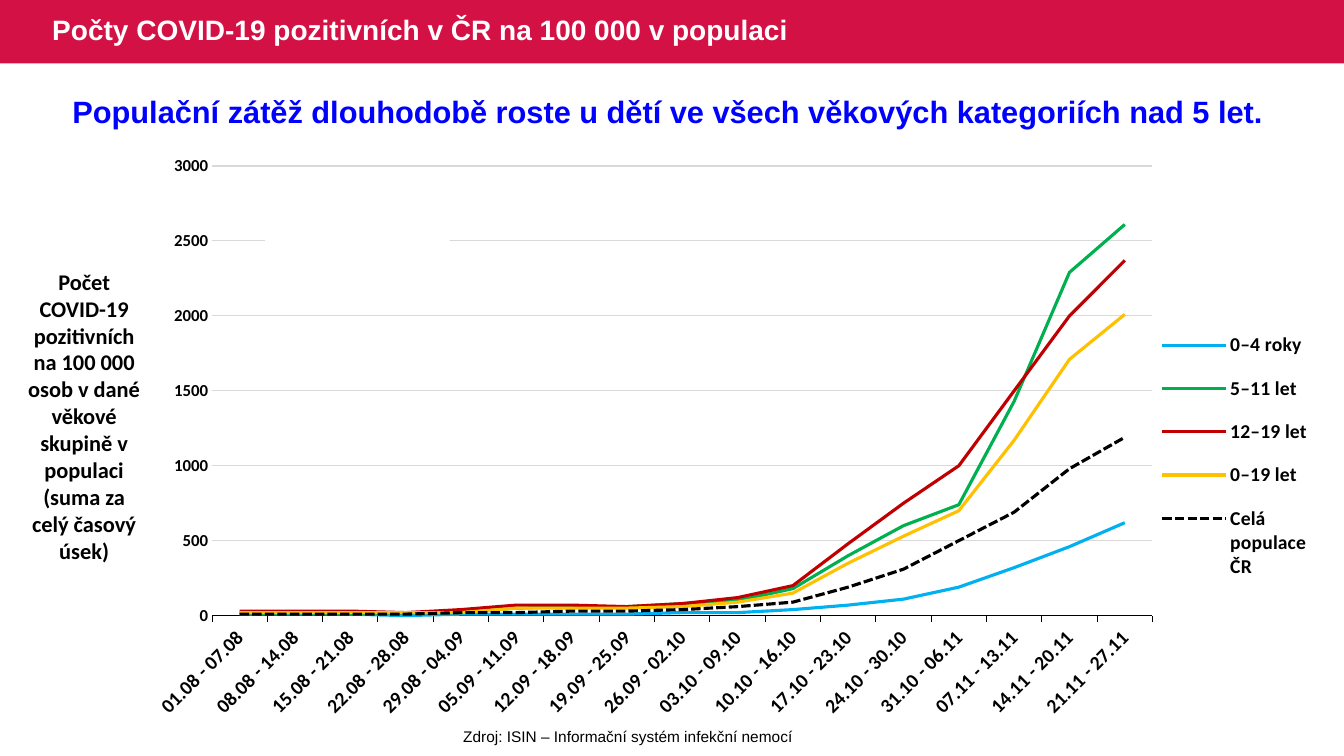
from lxml import etree
from pptx import Presentation
from pptx import util as u
from pptx.chart.data import CategoryChartData
from pptx.dml.color import RGBColor
from pptx.enum import chart as ch, dml, shapes, text
from pptx.oxml.ns import qn

# Content
TITLE = "Počty COVID-19 pozitivních v ČR na 100 000 v populaci"
MESSAGE = "Populační zátěž dlouhodobě roste u dětí ve všech věkových kategoriích nad 5 let."
AXIS_NOTE = ("Počet COVID-19 pozitivních na 100 000 osob v dané věkové skupině "
             "v populaci (suma za celý časový úsek)")
SOURCE = "Zdroj: ISIN – Informační systém infekční nemocí"
WEEKS = [
    "01.08 - 07.08", "08.08 - 14.08", "15.08 - 21.08", "22.08 - 28.08",
    "29.08 - 04.09", "05.09 - 11.09", "12.09 - 18.09", "19.09 - 25.09",
    "26.09 - 02.10", "03.10 - 09.10", "10.10 - 16.10", "17.10 - 23.10",
    "24.10 - 30.10", "31.10 - 06.11", "07.11 - 13.11", "14.11 - 20.11",
    "21.11 - 27.11",
]
AGE_GROUPS = [  # name, colour, weekly values
    ("0–4 roky", "sky",
     [10, 10, 10, 0, 10, 10, 10, 10, 20, 20, 40, 70, 110, 190, 320, 460, 620]),
    ("5–11 let", "green",
     [10, 20, 10, 20, 20, 50, 60, 60, 80, 100, 180, 400, 600, 740, 1430, 2290, 2610]),
    ("12–19 let", "dark_red",
     [30, 30, 30, 20, 40, 70, 70, 60, 80, 120, 200, 480, 750, 1000, 1500, 2000, 2370]),
    ("0–19 let", "amber",
     [20, 20, 20, 20, 20, 50, 50, 50, 60, 90, 150, 350, 530, 700, 1170, 1710, 2010]),
    ("Celá populace ČR", "black",
     [10, 10, 10, 10, 20, 20, 30, 30, 40, 60, 90, 190, 310, 500, 690, 980, 1190]),
]
COLORS = {
    "crimson": "D31145", "white": "FFFFFF", "black": "000000", "blue": "0000FF",
    "grid": "D9D9D9", "sky": "00B0F0", "green": "00B050", "dark_red": "C00000",
    "amber": "FFC000",
}
PX = 9144  # 100 px to the inch
CHART_BOX = (152, 153, 1166, 587)
PLOT_LAYOUT = (0.05, 0.02, 0.8, 0.76)
LEGEND_LAYOUT = (0.85, 0.27, 0.14, 0.48)


def rgb(name):
    return RGBColor.from_string(COLORS[name])


def px(*lengths):
    return [u.Emu(n * PX) for n in lengths]


def style(font, face, size, color="black", bold=True):
    font.name, font.size, font.bold = face, u.Pt(size), bold
    font.color.rgb = rgb(color)


def add_block(box, color):
    block = slide.shapes.add_shape(shapes.MSO_SHAPE.RECTANGLE, *px(*box))
    block.shadow.inherit = False
    block.fill.solid()
    block.fill.fore_color.rgb = rgb(color)
    block.line.fill.background()


def add_label(box, words, face, size, color="black", bold=True,
              align=text.PP_ALIGN.CENTER, anchor=text.MSO_ANCHOR.TOP):
    frame = slide.shapes.add_textbox(*px(*box)).text_frame
    frame.word_wrap = True
    frame.vertical_anchor = anchor
    line = frame.paragraphs[0]
    line.text, line.alignment = words, align
    style(line.font, face, size, color, bold)
    return line


def make_layout(fractions, inner=False):
    layout = etree.Element(qn("c:layout"))
    manual = etree.SubElement(layout, qn("c:manualLayout"))
    entries = [("layoutTarget", "inner")] if inner else []
    entries += [("xMode", "edge"), ("yMode", "edge")]
    entries += zip("xywh", fractions)
    for tag, value in entries:
        etree.SubElement(manual, qn("c:" + tag)).set("val", str(value))
    return layout


def drop_layout(parent):
    for old in parent.findall(qn("c:layout")):
        parent.remove(old)


prs = Presentation()
prs.slide_width, prs.slide_height = px(1333, 750)
slide = prs.slides.add_slide(prs.slide_layouts[6])

# Header and source
add_block((0, 0, 1333, 63), "crimson")
heading = add_label((42, 0, 837, 63), TITLE, "Arial", 20, "white",
                    align=text.PP_ALIGN.LEFT, anchor=text.MSO_ANCHOR.MIDDLE)
heading.line_spacing = 0.9
add_label((236, 716, 774, 29), SOURCE, "Arial", 11, bold=False)

# Line chart
data = CategoryChartData()
data.categories = WEEKS
for name, _, values in AGE_GROUPS:
    data.add_series(name, values)
chart = slide.shapes.add_chart(ch.XL_CHART_TYPE.LINE, *px(*CHART_BOX), data).chart
chart.has_title = False
style(chart.font, "Calibri", 14)
for series, (_, color, _) in zip(chart.plots[0].series, AGE_GROUPS):
    series.smooth = False
    series.marker.style = ch.XL_MARKER_STYLE.NONE
    series.format.line.color.rgb = rgb(color)
    series.format.line.width = u.Pt(2.25)
series.format.line.dash_style = dml.MSO_LINE.SQUARE_DOT  # whole population

# Axes
weeks_axis, count_axis = chart.category_axis, chart.value_axis
style(weeks_axis.tick_labels.font, "Calibri", 14)
weeks_axis.format.line.color.rgb = rgb("black")
weeks_axis.format.line.width = u.Pt(0.75)
weeks_axis.major_tick_mark = ch.XL_TICK_MARK.OUTSIDE
weeks_axis._element.find(qn("c:txPr")).find(qn("a:bodyPr")).set("rot", "-2700000")
style(count_axis.tick_labels.font, "Calibri", 12)
count_axis.minimum_scale, count_axis.maximum_scale = 0, 3000
count_axis.major_unit = 500
count_axis.major_tick_mark = ch.XL_TICK_MARK.NONE
count_axis.format.line.fill.background()
count_axis.major_gridlines.format.line.color.rgb = rgb("grid")
count_axis.major_gridlines.format.line.width = u.Pt(0.75)

# Legend and plot area
chart.has_legend = True
legend = chart.legend
legend.position = ch.XL_LEGEND_POSITION.RIGHT
legend.include_in_layout = False
style(legend.font, "Calibri", 14)
drop_layout(legend._element)
legend._element.find(qn("c:legendPos")).addnext(make_layout(LEGEND_LAYOUT))
plot_area = chart._chartSpace.chart.plotArea
drop_layout(plot_area)
plot_area.insert(0, make_layout(PLOT_LAYOUT, inner=True))

# Axis note, message and blank patch over the gridline
add_label((15, 261, 137, 306), AXIS_NOTE, "Calibri", 16)
add_label((42, 87, 1241, 47), MESSAGE, "Arial", 22, "blue")
add_block((263, 231, 183, 30), "white")

prs.save("out.pptx")
